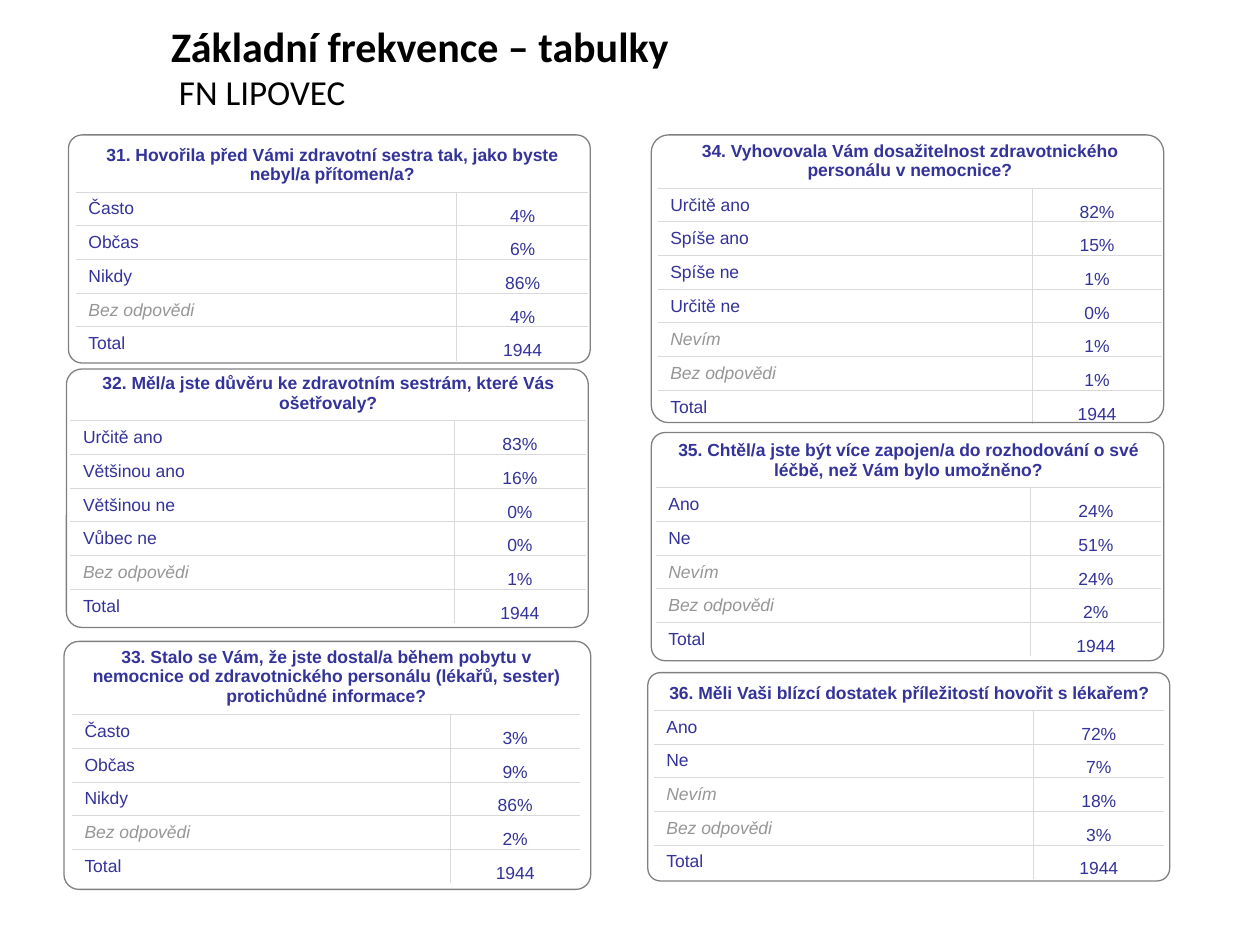
from lxml import etree
from pptx import Presentation
from pptx.dml.color import RGBColor
from pptx.enum import shapes, text
from pptx.oxml import ns
from pptx.util import Cm, Pt

COLORS = {"title": "000000", "text": "333399", "muted": "969696",
          "grid": "D9D9D9", "frame": "808080", "cell": "FFFFFF"}
NO_STYLE = "{2D5ABB26-0587-4C30-8999-92F81FD0307C}"
ROW_HEIGHT = 0.65
MUTED_ANSWERS = ("Nevím", "Bez odpovědi")


def write(paragraph, content, font="Arial", size=10, color="text", bold=False,
          italic=False, align=text.PP_ALIGN.LEFT):
    paragraph.alignment = align
    run = paragraph.add_run()
    run.text = content
    run.font.name = font
    run.font.size = Pt(size)
    run.font.bold = bold
    run._r.get_or_add_rPr().set("lang", "cs-CZ")
    run.font.italic = italic
    run.font.color.rgb = RGBColor.from_string(COLORS[color])


def set_borders(cell, visible):
    properties = cell._tc.get_or_add_tcPr()
    for side in "LRTB":
        line = etree.SubElement(properties, ns.qn(f"a:ln{side}"), w=str(Pt(0.5)))
        if side in visible:
            fill = etree.SubElement(line, ns.qn("a:solidFill"))
            etree.SubElement(fill, ns.qn("a:srgbClr"), val=COLORS["grid"])
        else:
            etree.SubElement(line, ns.qn("a:noFill"))


presentation = Presentation()
presentation.slide_width = Cm(25.4)
presentation.slide_height = Cm(19.05)
slide = presentation.slides.add_slide(presentation.slide_layouts[6])

title = slide.shapes.add_textbox(Cm(3.2), Cm(0.36), Cm(22.2), Cm(1.96)).text_frame
title.word_wrap = True
title.vertical_anchor = text.MSO_ANCHOR.MIDDLE
heading = title.paragraphs[0]
write(heading, "Základní frekvence – tabulky ", font="Calibri", size=24, color="title", bold=True)
heading.add_line_break()
write(heading, " FN LIPOVEC", font="Calibri", size=20, color="title")

questions = [
    ("31. Hovořila před Vámi zdravotní sestra tak, jako byste nebyl/a přítomen/a?",
     [("Často", 4), ("Občas", 6), ("Nikdy", 86), ("Bez odpovědi", 4)],
     (1.53, 2.77, 7.68, 2.65, 1.03), (1.38, 2.72, 10.52, 4.6)),
    ("32. Měl/a jste důvěru ke zdravotním sestrám, které Vás ošetřovaly?",
     [("Určitě ano", 83), ("Většinou ano", 16), ("Většinou ne", 0), ("Vůbec ne", 0),
      ("Bez odpovědi", 1)],
     (1.42, 7.38, 7.73, 2.66, 1.03), (1.34, 7.44, 10.52, 5.21)),
    ("33. Stalo se Vám, že jste dostal/a během pobytu v nemocnice od zdravotnického "
     "personálu (lékařů, sester) protichůdné informace?",
     [("Často", 3), ("Občas", 9), ("Nikdy", 86), ("Bez odpovědi", 2)],
     (1.45, 12.88, 7.62, 2.63, 1.44), (1.29, 12.93, 10.62, 5)),
    ("36. Měli Vaši blízcí dostatek příležitostí hovořit s lékařem?",
     [("Ano", 72), ("Ne", 7), ("Nevím", 18), ("Bez odpovědi", 3)],
     (13.18, 13.64, 7.65, 2.64, 0.65), (13.06, 13.56, 10.52, 4.2)),
    ("34. Vyhovovala Vám dosažitelnost zdravotnického personálu v nemocnice?",
     [("Určitě ano", 82), ("Spíše ano", 15), ("Spíše ne", 1), ("Určitě ne", 0),
      ("Nevím", 1), ("Bez odpovědi", 1)],
     (13.26, 2.69, 7.55, 2.61, 1.03), (13.13, 2.72, 10.33, 5.8)),
    ("35. Chtěl/a jste být více zapojen/a do rozhodování o své léčbě, než Vám bylo umožněno?",
     [("Ano", 24), ("Ne", 51), ("Nevím", 24), ("Bez odpovědi", 2)],
     (13.22, 8.73, 7.56, 2.62, 1.03), (13.13, 8.72, 10.33, 4.6)),
]

for question, answers, table_box, frame_box in questions:
    left, top, label_width, value_width, header_height = table_box
    rows = [(label, f"{share}%") for label, share in answers] + [("Total", "1944")]
    graphic = slide.shapes.add_table(
        len(rows) + 1, 2, Cm(left), Cm(top), Cm(label_width + value_width),
        Cm(header_height + ROW_HEIGHT * len(rows)))
    table = graphic.table
    table.first_row = False
    table.horz_banding = False
    for style in graphic.element.iter(ns.qn("a:tableStyleId")):
        style.text = NO_STYLE
    table.columns[0].width = Cm(label_width)
    table.columns[1].width = Cm(value_width)
    table.rows[0].height = Cm(header_height)

    header = table.cell(0, 0)
    header.merge(table.cell(0, 1))
    header.vertical_anchor = text.MSO_ANCHOR.MIDDLE
    for cell in table.rows[0].cells:
        set_borders(cell, "B")
        cell.fill.background()
    write(header.text_frame.paragraphs[0], question, bold=True, align=text.PP_ALIGN.CENTER)

    for index, (label, value) in enumerate(rows, start=1):
        table.rows[index].height = Cm(ROW_HEIGHT)
        label_cell, value_cell = table.rows[index].cells
        bottom = "" if label == "Total" else "B"
        set_borders(label_cell, "TR" + bottom)
        set_borders(value_cell, "LT" + bottom)
        for cell in (label_cell, value_cell):
            cell.fill.solid()
            cell.fill.fore_color.rgb = RGBColor.from_string(COLORS["cell"])
        label_cell.vertical_anchor = text.MSO_ANCHOR.MIDDLE
        value_cell.vertical_anchor = text.MSO_ANCHOR.BOTTOM
        value_cell.margin_left = value_cell.margin_right = value_cell.margin_top = Cm(0.03)
        value_cell.margin_bottom = 0
        muted = label in MUTED_ANSWERS
        write(label_cell.text_frame.paragraphs[0], label,
              color="muted" if muted else "text", italic=muted)
        write(value_cell.text_frame.paragraphs[0], value, align=text.PP_ALIGN.CENTER)

    frame = slide.shapes.add_shape(shapes.MSO_SHAPE.ROUNDED_RECTANGLE,
                                   *(Cm(length) for length in frame_box))
    frame.adjustments[0] = 0.06
    frame.shadow.inherit = False
    frame.fill.background()
    frame.line.color.rgb = RGBColor.from_string(COLORS["frame"])
    frame.line.width = Pt(0.75)

presentation.save("out.pptx")
